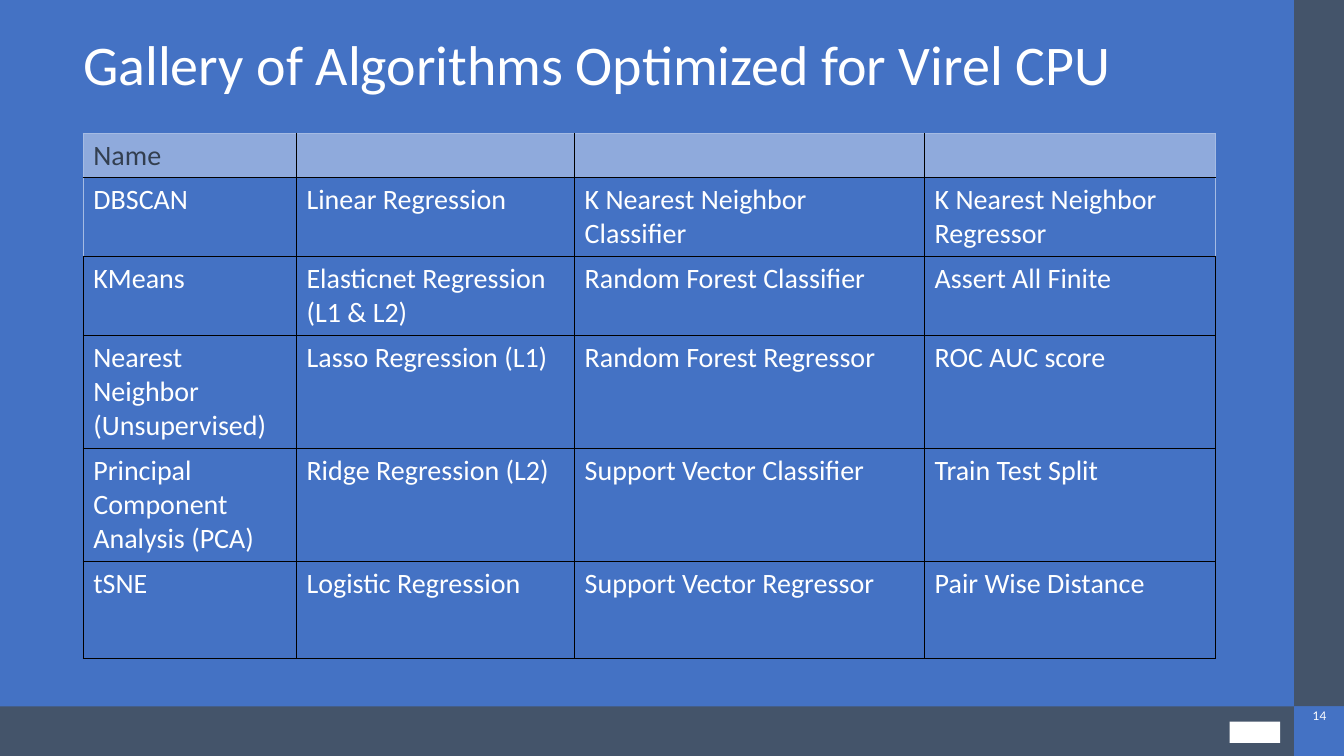
from lxml import etree
from pptx import Presentation
from pptx.dml.color import RGBColor
from pptx.enum.shapes import MSO_SHAPE
from pptx.enum.text import MSO_ANCHOR
from pptx.oxml.ns import qn
from pptx.util import Pt

RECT = MSO_SHAPE.RECTANGLE
TOP, MIDDLE, BOTTOM = MSO_ANCHOR.TOP, MSO_ANCHOR.MIDDLE, MSO_ANCHOR.BOTTOM

TITLE = "Gallery of Algorithms Optimized for Virel CPU"
PAGE_NUMBER = "14"
ROWS = [
    ["Name", "", "", ""],
    ["DBSCAN", "Linear Regression", "K Nearest Neighbor Classifier", "K Nearest Neighbor Regressor"],
    ["KMeans", "Elasticnet Regression (L1 & L2)", "Random Forest Classifier", "Assert All Finite"],
    ["Nearest Neighbor (Unsupervised)", "Lasso Regression (L1)", "Random Forest Regressor", "ROC AUC score"],
    ["Principal Component Analysis (PCA)", "Ridge Regression (L2)", "Support Vector Classifier", "Train Test Split"],
    ["tSNE", "Logistic Regression", "Support Vector Regressor", "Pair Wise Distance"],
]
COLORS = {
    "blue": "4472C4", "slate": "44546A", "white": "FFFFFF", "header": "8FAADC",
    "header_text": "333F50", "border": "000000", "light_border": "A5BBE3",
}
SLIDE_W, SLIDE_H, BAR = 960, 540, 35.5
TABLE_LEFT, TABLE_TOP = 59.5, 95.4
COL_WIDTHS = [152.3, 198.7, 250, 208]
ROW_HEIGHTS = [31.4, 56.4, 56.4, 80.7, 80.7, 69.3]


def rgb(name):
    return RGBColor.from_string(COLORS[name])


def add_bar(s, x, y, w, h, color):
    sp = s.shapes.add_shape(RECT, Pt(x), Pt(y), Pt(w), Pt(h))
    sp.shadow.inherit = False
    sp.fill.solid()
    sp.fill.fore_color.rgb = rgb(color)
    sp.line.fill.background()


def write(tf, text, size, color, font="Calibri"):
    p = tf.paragraphs[0]
    p.text = text
    for f in [p.font] + [r.font for r in p.runs]:
        f.size, f.name = Pt(size), font
        f.color.rgb = rgb(color)
    return p


def add_text(s, box, text, size, font, anchor, inset):
    tf = s.shapes.add_textbox(*map(Pt, box)).text_frame
    tf.word_wrap = True
    tf.vertical_anchor = anchor
    tf.margin_left = tf.margin_right = tf.margin_top = tf.margin_bottom = Pt(inset)
    write(tf, text, size, "white", font).line_spacing = 0.9


def set_borders(cell, sides):
    tcPr = cell._tc.get_or_add_tcPr()
    for i, (side, color) in enumerate(sides.items()):
        ln = etree.Element(qn("a:" + side), w=str(Pt(1)))
        fill = etree.SubElement(ln, qn("a:solidFill"))
        etree.SubElement(fill, qn("a:srgbClr"), val=COLORS[color])
        tcPr.insert(i, ln)


def add_algorithm_table(s):
    shape = s.shapes.add_table(len(ROWS), len(COL_WIDTHS), Pt(TABLE_LEFT), Pt(TABLE_TOP),
                               Pt(sum(COL_WIDTHS)), Pt(sum(ROW_HEIGHTS)))
    table = shape.table
    table.first_row = table.horz_banding = False
    for col, w in zip(table.columns, COL_WIDTHS):
        col.width = Pt(w)
    for row, h in zip(table.rows, ROW_HEIGHTS):
        row.height = Pt(h)
    last = len(COL_WIDTHS) - 1
    for i, texts in enumerate(ROWS):
        for j, text in enumerate(texts):
            cell = table.cell(i, j)
            header = i == 0
            write(cell.text_frame, text, 20, "header_text" if header else "white")
            cell.vertical_anchor = BOTTOM if header else TOP
            if header:
                cell.fill.solid()
                cell.fill.fore_color.rgb = rgb("header")
            else:
                cell.fill.background()
            edge = "light_border" if i < 2 else "border"
            set_borders(cell, {
                "lnL": edge if j == 0 else "border",
                "lnR": edge if j == last else "border",
                "lnT": "light_border" if header else "border",
                "lnB": "border",
            })


def main():
    prs = Presentation()
    prs.slide_width, prs.slide_height = Pt(SLIDE_W), Pt(SLIDE_H)
    s = prs.slides.add_slide(prs.slide_layouts[6])
    s.background.fill.solid()
    s.background.fill.fore_color.rgb = rgb("blue")

    x, y = SLIDE_W - BAR, SLIDE_H - BAR
    add_bar(s, 0, y, x, BAR, "slate")
    add_bar(s, x, y, BAR, BAR, "blue")
    add_bar(s, x, 0, BAR, y, "slate")
    add_bar(s, 878.4, 515.5, 36, 15.1, "white")
    add_text(s, (935.6, 493.6, 16.6, 36.7), PAGE_NUMBER, 8.5, "Lato", MIDDLE, 2)
    add_text(s, (59.5, 26.6, 867.6, 69), TITLE, 40, "Calibri", TOP, 0)
    add_algorithm_table(s)
    prs.save("out.pptx")


if __name__ == "__main__":
    main()
